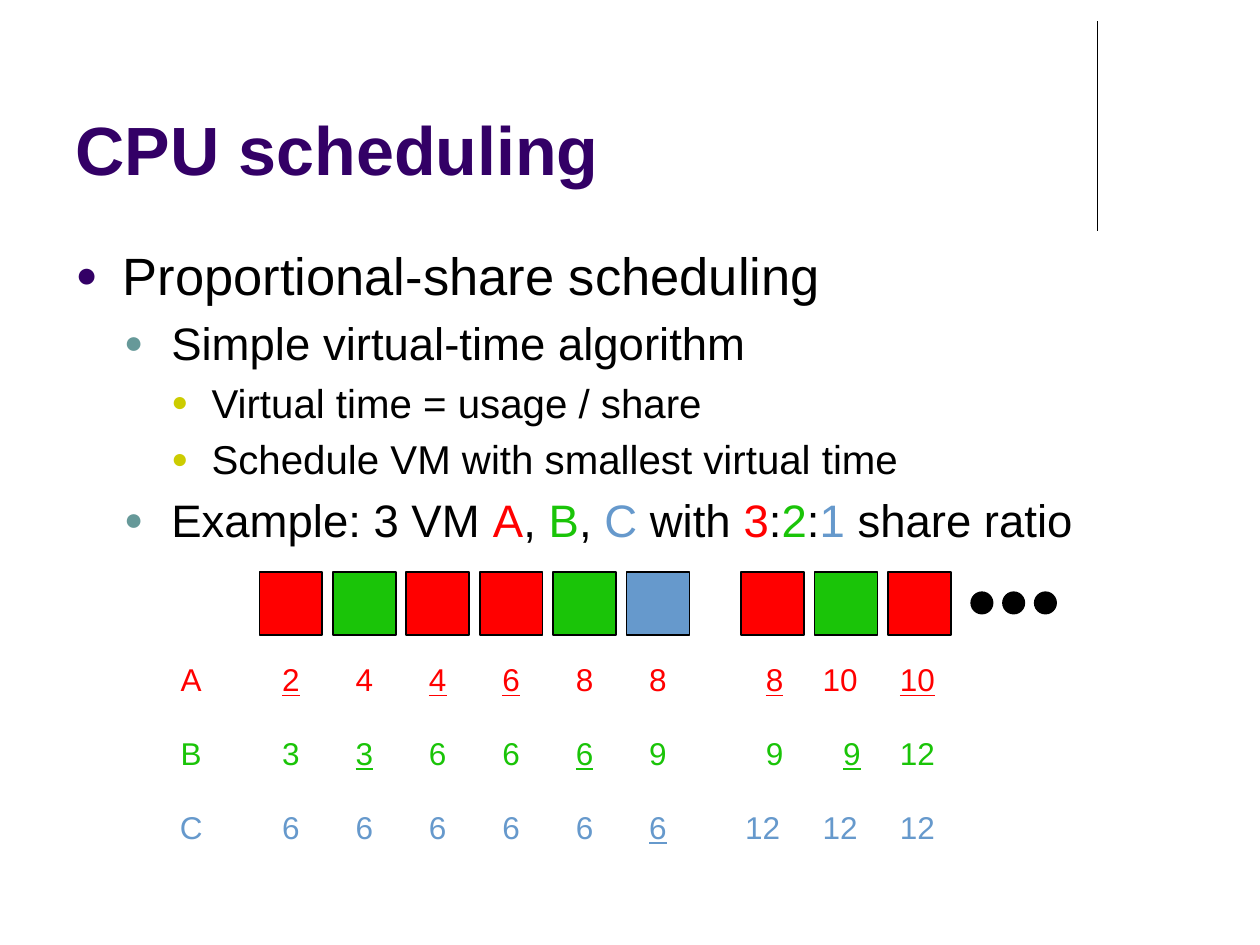
import pptx
import pptx.dml.color
import pptx.enum.shapes
import pptx.enum.text
import pptx.oxml
import pptx.oxml.ns
import pptx.util
from pptx.util import Cm, Pt

COLORS = {
    "title": "330066", "text": "000000",
    "A": "FF0000", "B": "1AC408", "C": "6699CC",
    "level 0": "330066", "level 1": "669999", "level 2": "CCCC00",
}
FONT = "Arial"
STEP = {"A": 2, "B": 3, "C": 6}  # virtual time added by one slot, for shares 3:2:1
SLOTS_PER_ROUND = 6
SLOTS = 9

# Size in points, left margin and hanging indent in cm, for each list level
LEVELS = [(30, 0.95, 0.95), (26, 1.93, 0.95), (23, 2.74, 0.81)]
POINTS = [
    (0, [("Proportional-share scheduling", "text")]),
    (1, [("Simple virtual-time algorithm", "text")]),
    (2, [("Virtual time = usage / share", "text")]),
    (2, [("Schedule VM with smallest virtual time", "text")]),
    (1, [("Example: 3 VM ", "text"), ("A", "A"), (", ", "text"), ("B", "B"),
         (", ", "text"), ("C", "C"), (" with ", "text"), ("3", "A"),
         (":", "text"), ("2", "B"), (":", "text"), ("1", "C"),
         (" share ratio", "text")]),
]


def rgb(name):
    return pptx.dml.color.RGBColor.from_string(COLORS[name])


def place(shape, left, top, width, height):
    shape.left, shape.top = Cm(left), Cm(top)
    shape.width, shape.height = Cm(width), Cm(height)


def add_run(paragraph, text, size, color, bold=False, underline=False):
    run = paragraph.add_run()
    run.text = text
    run.font.name = FONT
    run.font.size = Pt(size)
    run.font.bold = bold
    run.font.underline = underline
    run.font.color.rgb = rgb(color)


def set_bullet(paragraph, level):
    _, margin, hanging = LEVELS[level]
    properties = paragraph._p.get_or_add_pPr()
    properties.set("marL", str(Cm(margin)))
    properties.set("indent", str(-Cm(hanging)))
    color = COLORS[f"level {level}"]
    for tag in (f'<a:buClr {{}}><a:srgbClr val="{color}"/></a:buClr>',
                '<a:buSzPct {} val="70000"/>',
                f'<a:buFont {{}} typeface="{FONT}"/>',
                '<a:buChar {} char="●"/>'):
        properties.append(pptx.oxml.parse_xml(tag.format(pptx.oxml.ns.nsdecls("a"))))


def fill_title(title, left, top, width, height):
    place(title, left, top, width, height)
    frame = title.text_frame
    frame.auto_size = pptx.enum.text.MSO_AUTO_SIZE.NONE
    frame.vertical_anchor = pptx.enum.text.MSO_ANCHOR.BOTTOM
    heading = frame.paragraphs[0]
    heading.alignment = pptx.enum.text.PP_ALIGN.LEFT
    add_run(heading, "CPU scheduling", 39, "title", bold=True)


def fill_points(body, left, top, width, height):
    place(body, left, top, width, height)
    frame = body.text_frame
    frame.auto_size = pptx.enum.text.MSO_AUTO_SIZE.NONE
    for number, (level, parts) in enumerate(POINTS):
        point = frame.add_paragraph() if number else frame.paragraphs[0]
        point.level = level
        set_bullet(point, level)
        if number == 0:
            point.space_before = Pt(0)
        for text, color in parts:
            add_run(point, text, LEVELS[level][0], color)


def add_rule(slide, x, top, bottom):
    rule = slide.shapes.add_connector(
        pptx.enum.shapes.MSO_CONNECTOR.STRAIGHT, Cm(x), Cm(top), Cm(x), Cm(bottom))
    rule.line.color.rgb = rgb("text")
    rule.line.width = Pt(0.75)
    rule._element.spPr.append(
        pptx.oxml.parse_xml(f'<a:effectLst {pptx.oxml.ns.nsdecls("a")}/>'))


def add_mark(group, kind, left, top, size, color):
    mark = group.shapes.add_shape(kind, Cm(left), Cm(top), Cm(size), Cm(size))
    mark.shadow.inherit = False
    mark.fill.solid()
    mark.fill.fore_color.rgb = rgb(color)
    mark.line.color.rgb = rgb("text")
    mark.line.width = Pt(1)


def add_label(group, text, right, top, color, underline=False):
    """Place a label whose box ends at the given right edge."""
    width = 0.49 + 0.48 * len(text)
    label = group.shapes.add_textbox(Cm(right - width), Cm(top), Cm(width), Cm(1.27))
    frame = label.text_frame
    frame.word_wrap = False
    frame.vertical_anchor = pptx.enum.text.MSO_ANCHOR.MIDDLE
    frame.paragraphs[0].alignment = pptx.enum.text.PP_ALIGN.CENTER
    add_run(frame.paragraphs[0], text, 18, color, underline=underline)


def add_schedule(slide, left, top):
    """Draw the slots, each VM's virtual times, and the continuation dots."""
    group = slide.shapes.add_group_shape()
    shape_kinds = pptx.enum.shapes.MSO_SHAPE
    row_tops = {vm: top + 1.53 + 1.49 * row for row, vm in enumerate(STEP)}
    for vm, row_top in row_tops.items():
        add_label(group, vm, left + 1.04, row_top, vm)

    times = dict(STEP)
    for slot in range(SLOTS):
        next_vm = min(times, key=times.get)
        cycle, column = divmod(slot, SLOTS_PER_ROUND)
        square_left = left + (1.93, 11.64)[cycle] + 1.48 * column
        times_right = left + (3.05 + 1.48 * column, 12.8 + 1.56 * column)[cycle]
        add_mark(group, shape_kinds.RECTANGLE, square_left, top, 1.27, next_vm)
        for vm, time in times.items():
            add_label(group, str(time), times_right, row_tops[vm], vm, vm == next_vm)
        times[next_vm] += STEP[next_vm]

    for dot in range(3):
        add_mark(group, shape_kinds.OVAL, left + 16.28 + 0.64 * dot, top + 0.41,
                 0.43, "text")


def main():
    deck = pptx.Presentation()
    deck.slide_width, deck.slide_height = Cm(25.4), Cm(19.05)
    slide = deck.slides.add_slide(deck.slide_layouts[1])
    add_rule(slide, 22.12, 0.43, 4.65)
    fill_title(slide.shapes.title, 1.27, 0.33, 20.96, 3.61)
    fill_points(slide.placeholders[1], 1.27, 4.78, 22.86, 6.15)
    add_schedule(slide, 3.3, 11.53)
    deck.save("out.pptx")


if __name__ == "__main__":
    main()
